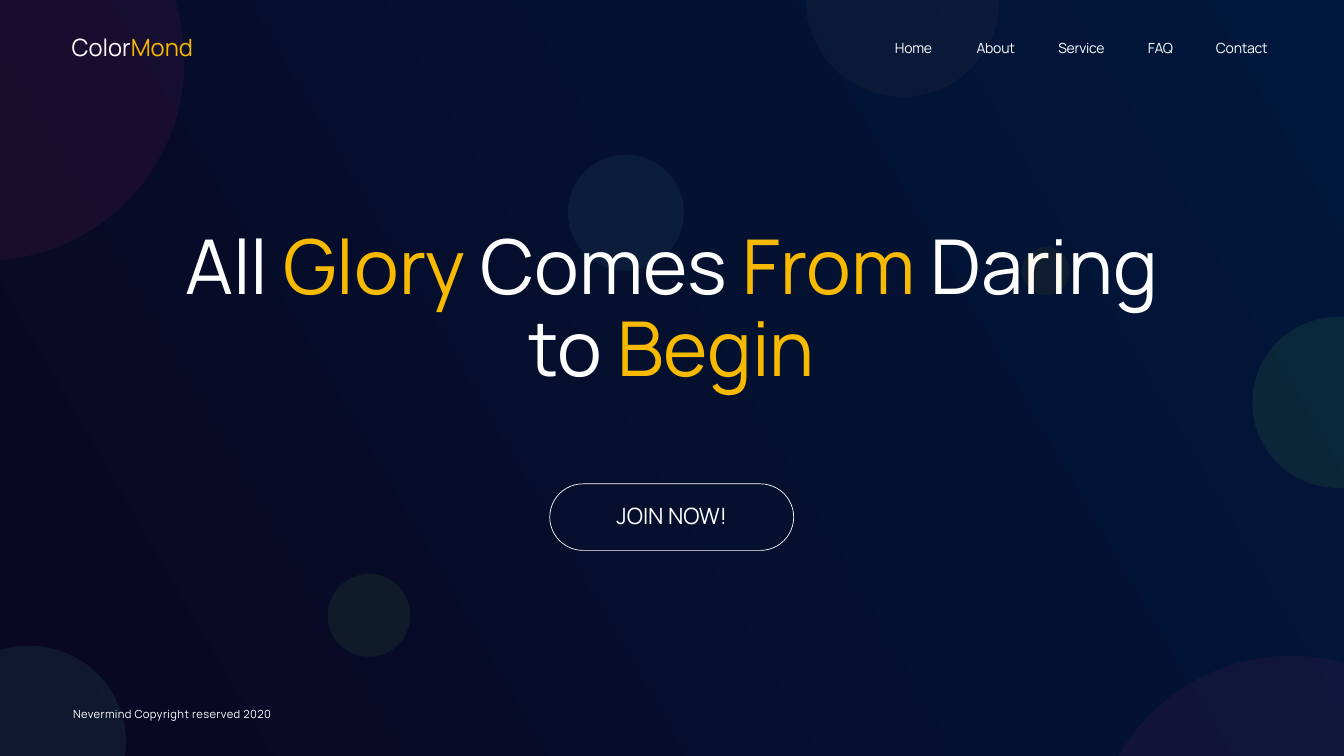
import pptx
import pptx.dml.color
import pptx.enum.shapes
import pptx.enum.text
import pptx.oxml
import pptx.oxml.ns
import pptx.util

Inches = pptx.util.Inches
RGBColor = pptx.dml.color.RGBColor
MSO_SHAPE = pptx.enum.shapes.MSO_SHAPE
MSO_ANCHOR = pptx.enum.text.MSO_ANCHOR
MSO_AUTO_SIZE = pptx.enum.text.MSO_AUTO_SIZE
PP_ALIGN = pptx.enum.text.PP_ALIGN

FONT = "Manrope"
NIGHT = RGBColor(0x09, 0x07, 0x21)
NAVY = RGBColor(0x00, 0x18, 0x3C)
WHITE = RGBColor(0xFF, 0xFF, 0xFF)
GOLD = RGBColor(0xF7, 0xBA, 0x01)
PINK = RGBColor(0xCB, 0x2A, 0x7A)
GREEN = RGBColor(0x89, 0xFA, 0x4E)
AQUA = RGBColor(0x72, 0xFD, 0xEA)
CORAL = RGBColor(0xFF, 0x96, 0x8D)

# Circles: left, top, diameter, colour, opacity in percent
BACK_CIRCLES = [
    (21.67, 13.01, 7.91, PINK, 7),
    (24.85, 6.29, 3.39, GREEN, 7),
    (11.27, 3.07, 2.3, AQUA, 6),
    (-1.34, 12.81, 3.84, AQUA, 7),
    (6.5, 11.39, 1.64, GREEN, 7),
    (-4.25, -2.74, 7.91, PINK, 9),
]
FRONT_CIRCLES = [
    (15.99, -1.92, 3.84, CORAL, 4),
    (20.28, 4.9, 0.95, GOLD, 6),
]
# Menu: label, left, width
MENU = [("Home", 17.7, 0.93), ("About", 19.32, 0.93), ("Service", 20.94, 1.09),
        ("FAQ", 22.72, 0.65), ("Contact", 24.07, 1.21)]


def paint_background(slide):
    fill = slide.background.fill
    fill.gradient()
    fill.gradient_angle = 30
    for stop, color in zip(fill.gradient_stops, (NIGHT, NAVY)):
        stop.color.rgb = color


def add_circle(slide, left, top, size, color, opacity):
    sp = slide.shapes.add_shape(MSO_SHAPE.OVAL, Inches(left), Inches(top),
                                Inches(size), Inches(size))
    sp.shadow.inherit = False
    sp.fill.solid()
    sp.fill.fore_color.rgb = color
    sp.line.fill.background()
    clr = sp.fill._xPr.find(".//" + pptx.oxml.ns.qn("a:srgbClr"))
    alpha = pptx.oxml.parse_xml(
        f'<a:alpha {pptx.oxml.ns.nsdecls("a")} val="{opacity * 1000}"/>')
    clr.append(alpha)


def write_runs(sp, runs, size, margin=0.06, wrap=False, spacing=0,
               align=PP_ALIGN.LEFT, line_spacing=None,
               anchor=MSO_ANCHOR.TOP, auto_size=MSO_AUTO_SIZE.SHAPE_TO_FIT_TEXT):
    """Fill a box with one paragraph of (text, colour) runs."""
    tf = sp.text_frame
    tf.word_wrap = wrap
    tf.auto_size = auto_size
    tf.vertical_anchor = anchor
    tf.margin_left = tf.margin_right = Inches(margin)
    tf.margin_top = tf.margin_bottom = Inches(margin)
    p = tf.paragraphs[0]
    p.alignment = align
    if line_spacing:
        p.line_spacing = line_spacing
    for text, color in runs:
        r = p.add_run()
        r.text = text
        r.font.name = FONT
        r.font.size = pptx.util.Pt(size)
        r.font.color.rgb = color
        if spacing:
            r._r.get_or_add_rPr().set("spc", str(round(spacing * 100)))


def add_text(slide, left, top, width, height, runs, size, **options):
    sp = slide.shapes.add_textbox(Inches(left), Inches(top),
                                  Inches(width), Inches(height))
    write_runs(sp, runs, size, **options)


def add_headline(slide):
    sp = slide.shapes.title
    sp.left, sp.top = Inches(3.6), Inches(4.5)
    sp.width, sp.height = Inches(19.46), Inches(4.24)
    runs = [("All ", WHITE), ("Glory", GOLD), (" Comes ", WHITE),
            ("From", GOLD), (" Daring to ", WHITE), ("Begin", GOLD)]
    write_runs(sp, runs, 108, margin=0.05, wrap=True,
               align=PP_ALIGN.CENTER, line_spacing=0.9)
    # Bring the headline in front of the back circles
    slide.shapes._spTree.append(sp._element)


def add_button(slide):
    sp = slide.shapes.add_shape(MSO_SHAPE.ROUNDED_RECTANGLE, Inches(10.91),
                                Inches(9.6), Inches(4.84), Inches(1.32))
    sp.adjustments[0] = 0.5
    sp.shadow.inherit = False
    sp.fill.background()
    sp.line.color.rgb = WHITE
    sp.line.width = pptx.util.Pt(1)
    add_text(slide, 11.43, 9.91, 3.8, 0.89, [("JOIN NOW!", WHITE)], 32,
             margin=0.05, wrap=True, align=PP_ALIGN.CENTER,
             auto_size=MSO_AUTO_SIZE.NONE)


def main():
    prs = pptx.Presentation()
    prs.slide_width, prs.slide_height = Inches(26.67), Inches(15)
    slide = prs.slides.add_slide(prs.slide_layouts[5])

    # Background and footer
    paint_background(slide)
    for circle in BACK_CIRCLES:
        add_circle(slide, *circle)
    add_text(slide, 1.39, 13.97, 4.38, 0.44,
             [("Nevermind Copyright reserved 2020", WHITE)], 16, spacing=0.6)

    # Call to action
    add_button(slide)
    add_headline(slide)
    for circle in FRONT_CIRCLES:
        add_circle(slide, *circle)

    # Header: menu and site name
    for label, left, width in MENU:
        add_text(slide, left, 0.72, width, 0.5, [(label, WHITE)], 20, spacing=-0.4)
    add_text(slide, 1.36, 0.61, 2.59, 0.77, [("Color", WHITE), ("Mond", GOLD)], 34,
             line_spacing=0.7, anchor=MSO_ANCHOR.MIDDLE)

    prs.save("out.pptx")


if __name__ == "__main__":
    main()
